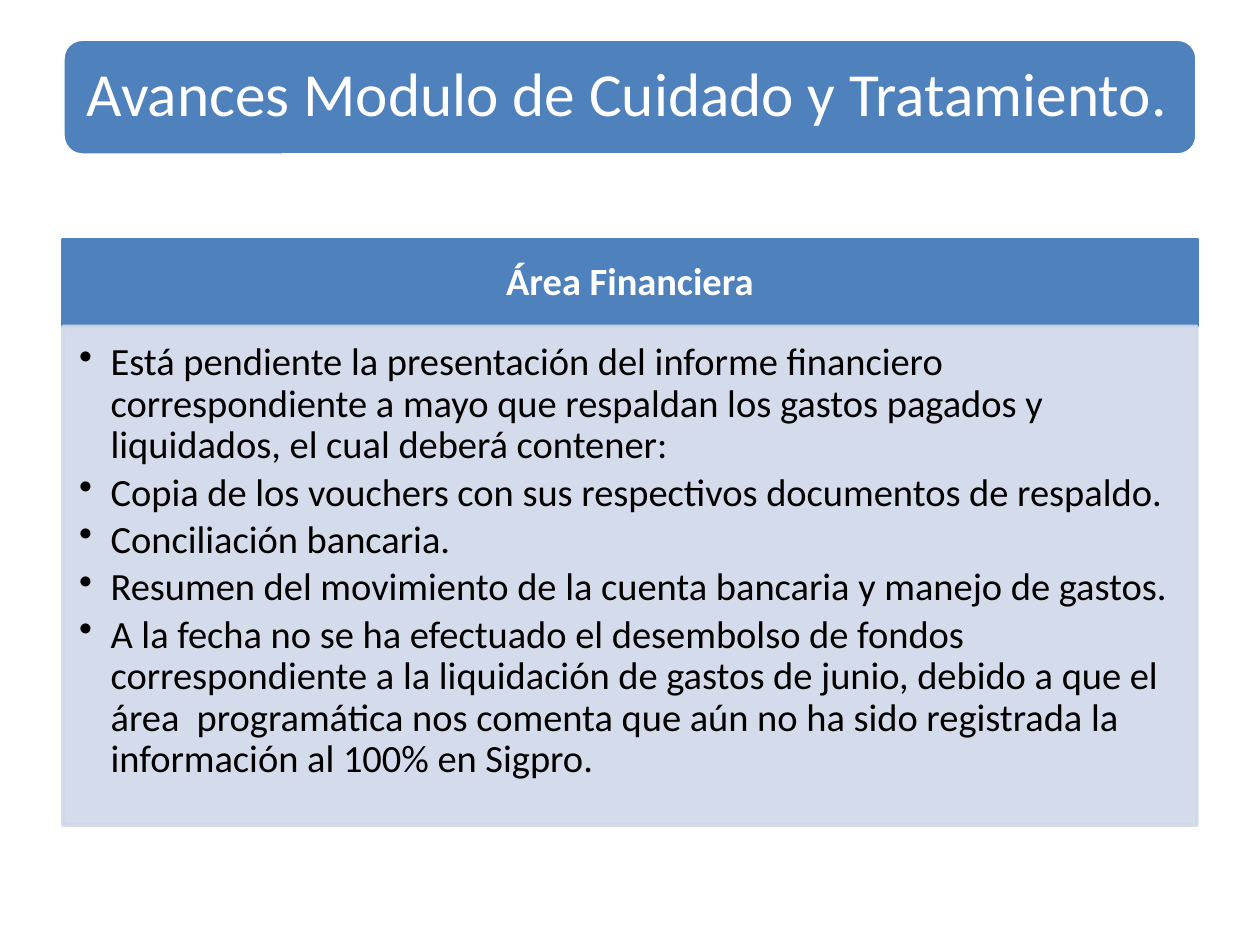
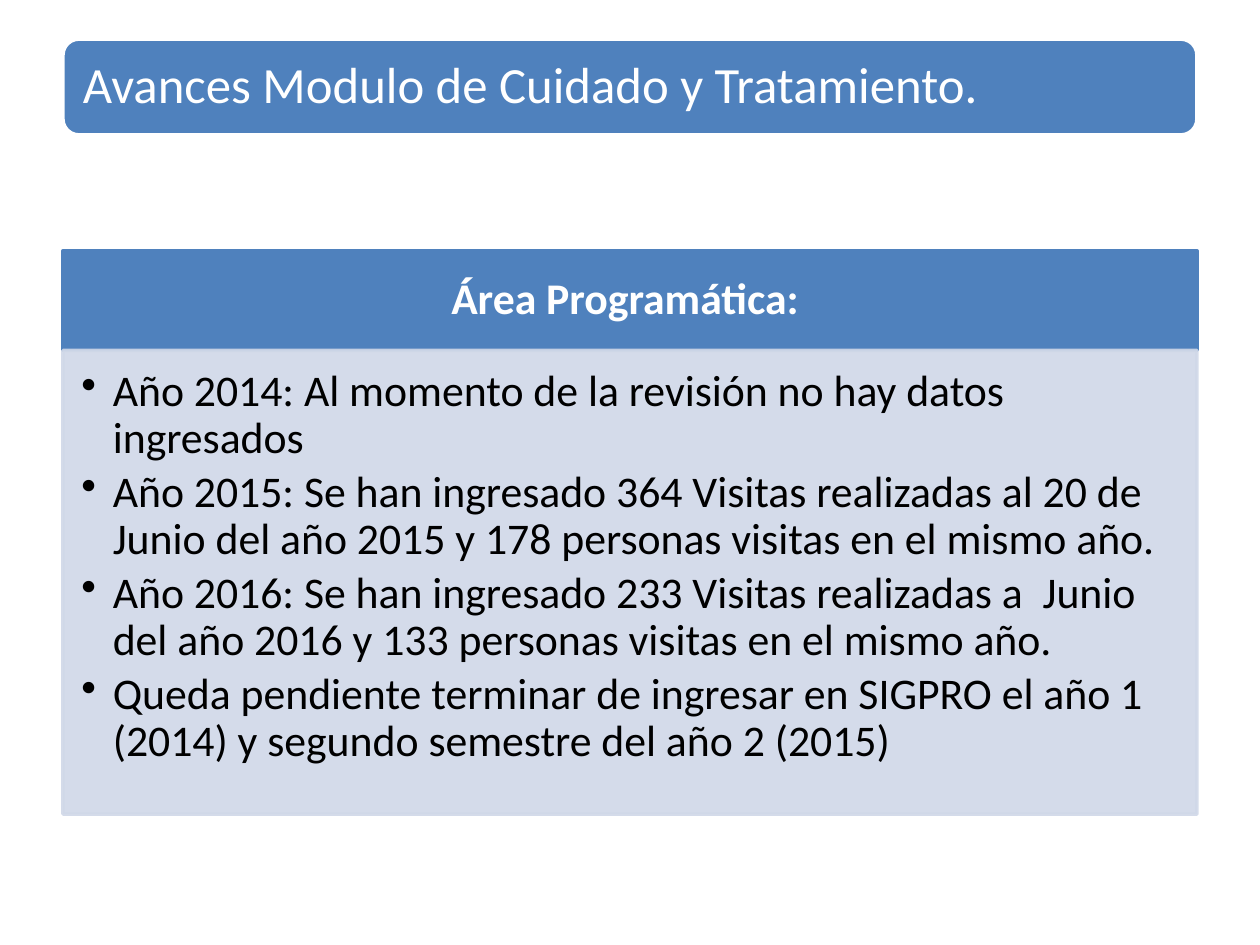
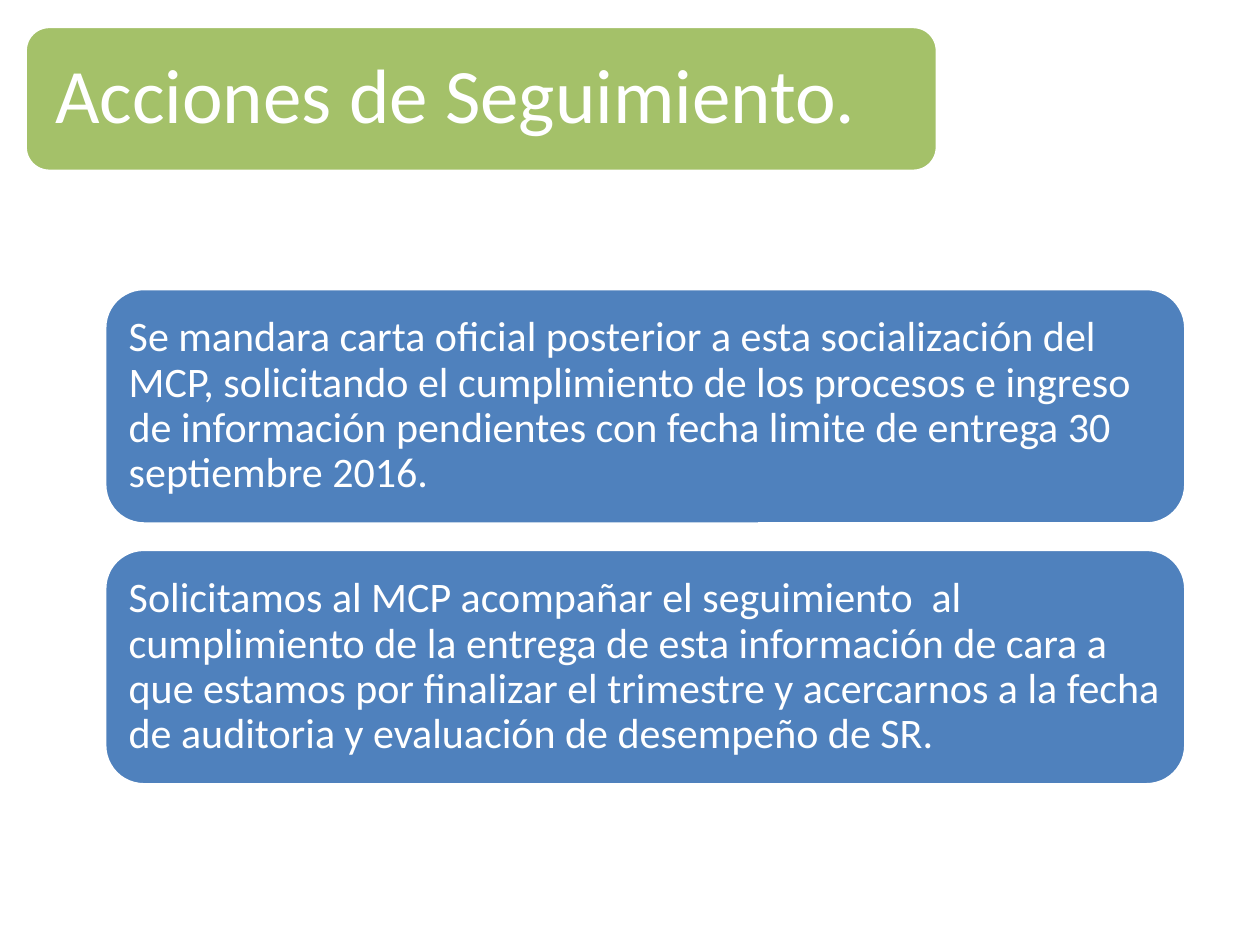
from dataclasses import dataclass

from lxml import etree
from pptx import Presentation
from pptx.dml.color import RGBColor
from pptx.enum import shapes, text
from pptx.oxml.ns import qn
from pptx.util import Pt

# Shared look
FONT = "Calibri"
BLUE, GREEN, PALE = "4F81BD", "9BBB59", "D0D8E8"
WHITE, BLACK = "FFFFFF", "000000"
LINE_WIDTH = 2
LINE_SPACING = 0.9
BULLET_INDENT = 18
MARGIN, CONTENT_WIDTH = 36, 648

# Insets (left, top, right, bottom) as multiples of the text size
BAND_INSETS = (0.3, 0.3, 0.3, 0.3)
HEADING_INSETS = (0.56, 0.32, 0.56, 0.32)
BODY_INSETS = (0.42, 0.42, 0.56, 0.63)


@dataclass
class Box:
    left: float
    top: float
    width: float
    height: float
    size: float
    paragraphs: list[str]
    fill: str = BLUE
    line: str = WHITE
    ink: str = WHITE
    opacity: int = 100
    line_opacity: int = 100
    rounded: bool = True
    bold: bool = False
    bulleted: bool = False
    centred: bool = False
    insets: tuple[float, float, float, float] = BAND_INSETS


@dataclass
class AreaSlide:
    title_height: float
    title_size: float
    top: float
    heading_height: float
    body_height: float
    size: float
    heading: str
    points: list[str]


def paint(fill, colour: str, opacity: int = 100) -> None:
    fill.solid()
    fill.fore_color.rgb = RGBColor.from_string(colour)
    if opacity < 100:
        srgb = fill._xPr.find(".//" + qn("a:srgbClr"))
        etree.SubElement(srgb, qn("a:alpha"), val=str(opacity * 1000))


def add_bullet(paragraph) -> None:
    properties = paragraph._p.get_or_add_pPr()
    indent = Pt(BULLET_INDENT)
    properties.set("marL", str(indent))
    properties.set("indent", str(-indent))
    etree.SubElement(properties, qn("a:buChar"), char="•")


def draw_box(slide, box: Box) -> None:
    kind = shapes.MSO_SHAPE.ROUNDED_RECTANGLE if box.rounded else shapes.MSO_SHAPE.RECTANGLE
    shape = slide.shapes.add_shape(
        kind, Pt(box.left), Pt(box.top), Pt(box.width), Pt(box.height))
    shape.shadow.inherit = False
    paint(shape.fill, box.fill, box.opacity)
    shape.line.width = Pt(LINE_WIDTH)
    paint(shape.line.fill, box.line, box.line_opacity)

    frame = shape.text_frame
    frame.word_wrap = True
    frame.vertical_anchor = text.MSO_ANCHOR.TOP if box.bulleted else text.MSO_ANCHOR.MIDDLE
    (frame.margin_left, frame.margin_top, frame.margin_right,
     frame.margin_bottom) = (Pt(ratio * box.size) for ratio in box.insets)

    for index, words in enumerate(box.paragraphs):
        paragraph = frame.add_paragraph() if index else frame.paragraphs[0]
        paragraph.alignment = text.PP_ALIGN.CENTER if box.centred else text.PP_ALIGN.LEFT
        paragraph.line_spacing = LINE_SPACING
        if box.bulleted:
            paragraph.level = 1
            paragraph.space_after = Pt(0.15 * box.size)
            add_bullet(paragraph)
        run = paragraph.add_run()
        run.text = words
        run.font.name = FONT
        run.font.size = Pt(box.size)
        run.font.bold = box.bold
        run.font.color.rgb = RGBColor.from_string(box.ink)


def draw_area(slide, area: AreaSlide) -> None:
    # Title band
    draw_box(slide, Box(MARGIN, 22.4, CONTENT_WIDTH, area.title_height, area.title_size,
                        ["Avances Modulo de Cuidado y Tratamiento."]))
    # Panel heading
    draw_box(slide, Box(MARGIN, area.top, CONTENT_WIDTH, area.heading_height, area.size,
                        [area.heading], line=BLUE, rounded=False, bold=True,
                        centred=True, insets=HEADING_INSETS))
    # Panel body
    draw_box(slide, Box(MARGIN, area.top + area.heading_height, CONTENT_WIDTH,
                        area.body_height, area.size, area.points, fill=PALE, line=PALE,
                        ink=BLACK, opacity=90, line_opacity=90, rounded=False,
                        bulleted=True, insets=BODY_INSETS))


def draw_follow_up(slide, title: str, actions: list[str]) -> None:
    top, height, gap = 164.9, 134.6, 14.4
    for index, action in enumerate(actions):
        draw_box(slide, Box(59.8, top + index * (height + gap), 617.8, height, 24, [action]))
    draw_box(slide, Box(14.4, 15.1, 521.3, 82.8, 44, [title], fill=GREEN, opacity=90))


AREAS = [
    AreaSlide(66.2, 35, 136.8, 49.7, 285.1, 22, "Área Financiera", [
        "Está pendiente la presentación del informe financiero correspondiente a mayo "
        "que respaldan los gastos pagados y liquidados, el cual deberá contener:",
        "Copia de los vouchers con sus respectivos documentos de respaldo.",
        "Conciliación bancaria.",
        "Resumen del movimiento de la cuenta bancaria y manejo de gastos.",
        "A la fecha no se ha efectuado el desembolso de fondos correspondiente a la "
        "liquidación de gastos de junio, debido a que el área  programática nos comenta "
        "que aún no ha sido registrada la información al 100% en Sigpro.",
    ]),
    AreaSlide(54.7, 29, 143.3, 56.9, 265, 25, "Área Programática: ", [
        "Año 2014: Al momento de la revisión no hay datos ingresados",
        "Año 2015: Se han ingresado 364 Visitas realizadas al 20 de Junio del año 2015 "
        "y 178 personas visitas en el mismo año.",
        "Año 2016: Se han ingresado 233 Visitas realizadas a  Junio del año 2016 "
        "y 133 personas visitas en el mismo año.",
        "Queda pendiente terminar de ingresar en SIGPRO el año 1 (2014) "
        "y segundo semestre del año 2 (2015)",
    ]),
]

ACTIONS = [
    "Se mandara carta oficial posterior a esta socialización del MCP, solicitando el "
    "cumplimiento de los procesos e ingreso de información pendientes con fecha limite "
    "de entrega 30 septiembre 2016.",
    "Solicitamos al MCP acompañar el seguimiento  al cumplimiento de la entrega de esta "
    "información de cara a que estamos por finalizar el trimestre y acercarnos a la fecha "
    "de auditoria y evaluación de desempeño de SR.",
]


def main() -> None:
    deck = Presentation()
    deck.slide_width, deck.slide_height = Pt(720), Pt(540)
    blank = deck.slide_layouts[6]
    for area in AREAS:
        draw_area(deck.slides.add_slide(blank), area)
    draw_follow_up(deck.slides.add_slide(blank), "Acciones de Seguimiento.", ACTIONS)
    deck.save("out.pptx")


if __name__ == "__main__":
    main()
